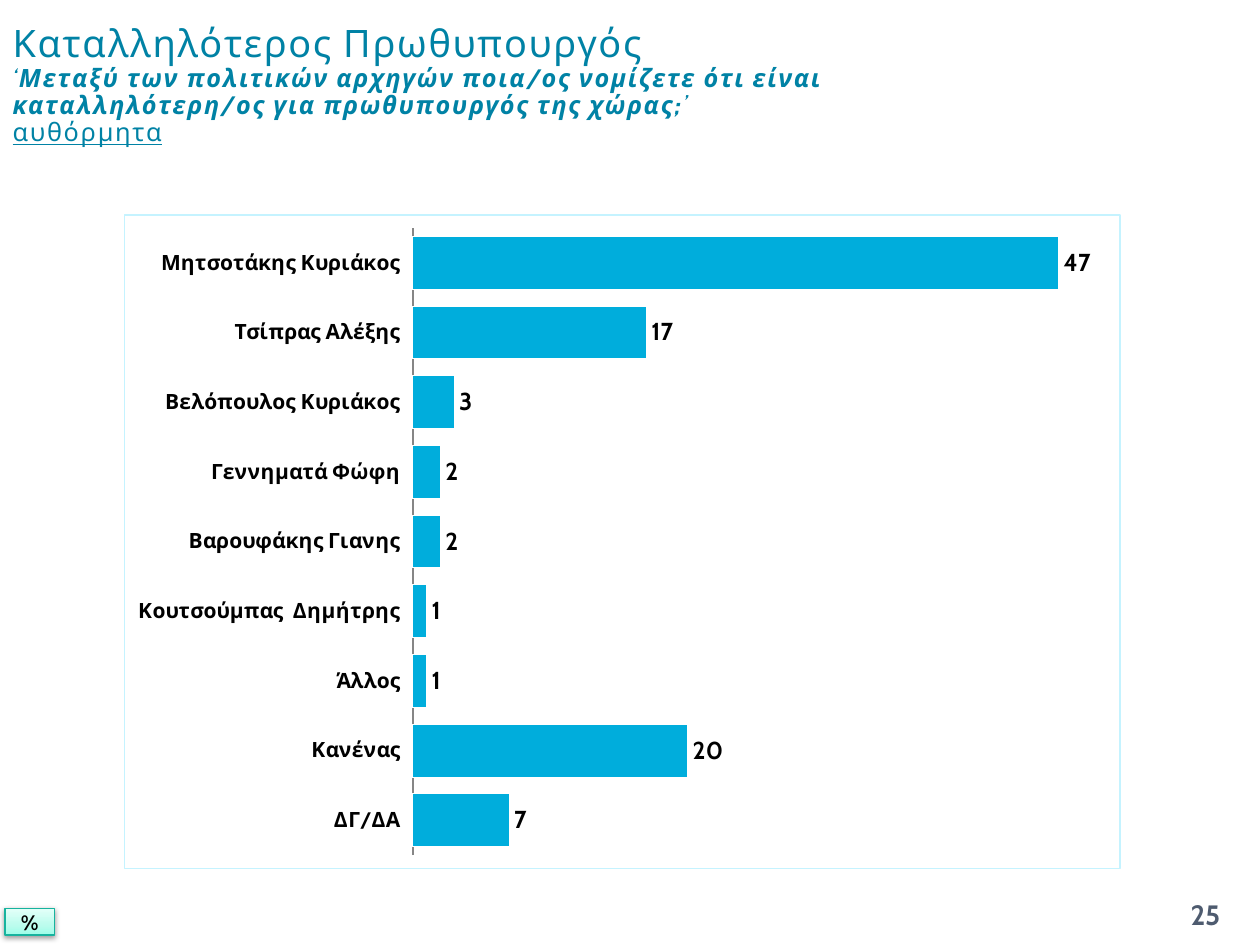
from lxml.etree import SubElement
from pptx import Presentation
from pptx.chart.data import CategoryChartData
from pptx.dml.color import RGBColor
from pptx.enum.chart import XL_CHART_TYPE as ChartType, XL_LABEL_POSITION as LabelPos
from pptx.enum.chart import XL_TICK_LABEL_POSITION as TickLabelPos, XL_TICK_MARK as TickMark
from pptx.enum.shapes import MSO_SHAPE as Shape
from pptx.enum.text import MSO_ANCHOR as Anchor, MSO_AUTO_SIZE as AutoSize, PP_ALIGN as Align
from pptx.oxml import parse_xml
from pptx.oxml.ns import nsdecls, qn
from pptx.util import Cm, Pt

FONT = "Cabin"
BLACK = RGBColor(0x00, 0x00, 0x00)
WHITE = RGBColor(0xFF, 0xFF, 0xFF)
TITLE_BLUE = RGBColor(0x00, 0x82, 0xA5)
BAR_BLUE = RGBColor(0x00, 0xAD, 0xDC)
FRAME_BLUE = RGBColor(0xC5, 0xF3, 0xFF)
AXIS_GREY = RGBColor(0x86, 0x86, 0x86)
SLATE = RGBColor(0x4E, 0x5B, 0x6F)
TEAL = RGBColor(0x16, 0xB3, 0x9E)
MINT_STOPS = [
    (0, RGBColor(0x9D, 0xFD, 0xE8)),
    (35, RGBColor(0xBB, 0xFC, 0xED)),
    (100, RGBColor(0xE4, 0xFF, 0xF9)),
]

ANSWERS = [
    ("Μητσοτάκης Κυριάκος", 47),
    ("Τσίπρας Αλέξης", 17),
    ("Βελόπουλος Κυριάκος", 3),
    ("Γεννηματά Φώφη", 2),
    ("Βαρουφάκης Γιανης", 2),
    ("Κουτσούμπας  Δημήτρης", 1),
    ("Άλλος", 1),
    ("Κανένας", 20),
    ("ΔΓ/ΔΑ", 7),
]


def style_font(font, size, color, bold=False, italic=False):
    font.name = FONT
    font.size = Pt(size)
    font.color.rgb = color
    font.bold = bold
    font.italic = italic


def add_run(paragraph, text, size, color, bold=False, italic=False):
    run = paragraph.add_run()
    run.text = text
    style_font(run.font, size, color, bold, italic)
    return run


def add_title_run(paragraph, text, size=14.4, bold=False, italic=False):
    run = add_run(paragraph, text, size, TITLE_BLUE, bold, italic)
    run.font._element.set("spc", "100")
    return run


def fill_title(title):
    title.left, title.top, title.width, title.height = Cm(0), Cm(0.33), Cm(17.5), Cm(2.8)
    frame = title.text_frame
    frame.word_wrap = True
    frame.auto_size = AutoSize.NONE
    frame.vertical_anchor = Anchor.MIDDLE
    heading = frame.paragraphs[0]
    heading.alignment = Align.LEFT
    heading.line_spacing = 0.9
    add_title_run(heading, "Καταλληλότερος Πρωθυπουργός", 21.6)
    heading.add_line_break()
    add_title_run(heading, "‘", italic=True)
    question = "Μεταξύ των πολιτικών αρχηγών ποια/ος νομίζετε ότι είναι καταλληλότερη/ος για πρωθυπουργός της χώρας;"
    add_title_run(heading, question, bold=True, italic=True)
    add_title_run(heading, "’ ", italic=True)
    heading.add_line_break()
    add_title_run(heading, "αυθόρμητα").font.underline = True


def place_plot(chart, x, y, w, h):
    plot_area = chart._chartSpace.chart.plotArea
    for old_layout in plot_area.findall(qn("c:layout")):
        plot_area.remove(old_layout)
    plot_area.insert(0, parse_xml(
        f'<c:layout {nsdecls("c")}><c:manualLayout><c:layoutTarget val="inner"/>'
        '<c:xMode val="edge"/><c:yMode val="edge"/>'
        f'<c:x val="{x}"/><c:y val="{y}"/><c:w val="{w}"/><c:h val="{h}"/>'
        '</c:manualLayout></c:layout>'))


def frame_chart(chart, color):
    chart._chartSpace.chart.addnext(parse_xml(
        f'<c:spPr {nsdecls("c", "a")}><a:noFill/><a:ln w="9525"><a:solidFill>'
        f'<a:srgbClr val="{color}"/></a:solidFill></a:ln></c:spPr>'))


def add_answer_chart(slide):
    answers = CategoryChartData(number_format="0")
    answers.categories = [name for name, share in ANSWERS]
    answers.add_series("Series 1", [share for name, share in ANSWERS])
    chart = slide.shapes.add_chart(
        ChartType.BAR_CLUSTERED, Cm(2.49), Cm(4.32), Cm(20.1), Cm(13.2), answers).chart
    chart.has_legend = False
    chart.has_title = False
    style_font(chart.font, 18, BLACK)

    names = chart.category_axis
    names.reverse_order = True
    names.major_tick_mark = names.minor_tick_mark = TickMark.NONE
    names.tick_label_position = TickLabelPos.LOW
    names.format.line.color.rgb = AXIS_GREY
    names.format.line.width = Pt(0.75)
    style_font(names.tick_labels.font, 12, BLACK, bold=True)

    shares = chart.value_axis
    shares.minimum_scale, shares.maximum_scale = 0, 50
    shares.has_major_gridlines = False
    shares.visible = False

    bars = chart.plots[0]
    bars.gap_width = 32
    bars.overlap = -25
    bars.vary_by_categories = False
    series = bars.series[0]
    series.invert_if_negative = False
    series.format.fill.solid()
    series.format.fill.fore_color.rgb = BAR_BLUE
    series.format.line.color.rgb = WHITE
    labels = series.data_labels
    labels.show_value = True
    labels.position = LabelPos.OUTSIDE_END
    labels.number_format = "#,##0"
    labels.number_format_is_linked = False
    style_font(labels.font, 14, BLACK, bold=True)

    place_plot(chart, 0.29, 0.02, 0.69, 0.96)
    frame_chart(chart, FRAME_BLUE)


def add_page_number(slide):
    frame = slide.shapes.add_textbox(Cm(23.3), Cm(17.93), Cm(2), Cm(1.02)).text_frame
    frame.word_wrap = True
    frame.vertical_anchor = Anchor.MIDDLE
    number = frame.paragraphs[0]
    number.alignment = Align.CENTER
    add_run(number, "25", 16, SLATE, bold=True)


def add_gradient(shape, stops):
    shape.fill.gradient()
    gradient = shape._element.spPr.find(qn("a:gradFill"))
    stop_list = gradient.find(qn("a:gsLst"))
    for old_stop in list(stop_list):
        stop_list.remove(old_stop)
    for percent, color in stops:
        stop = SubElement(stop_list, qn("a:gs"), pos=str(percent * 1000))
        SubElement(stop, qn("a:srgbClr"), val=str(color))
    gradient.find(qn("a:lin")).set("ang", "16200000")


def add_shadow(shape):
    shape.shadow.inherit = False
    effects = shape._element.spPr.find(qn("a:effectLst"))
    effects.append(parse_xml(
        f'<a:outerShdw {nsdecls("a")} blurRad="39370" dist="20320" dir="5400000" rotWithShape="0">'
        '<a:srgbClr val="000000"><a:alpha val="38000"/></a:srgbClr></a:outerShdw>'))


def add_percent_badge(slide):
    badge = slide.shapes.add_shape(Shape.RECTANGLE, Cm(0.1), Cm(18.31), Cm(1), Cm(0.54))
    add_gradient(badge, MINT_STOPS)
    badge.line.color.rgb = TEAL
    badge.line.width = Pt(0.75)
    add_shadow(badge)
    frame = badge.text_frame
    frame.vertical_anchor = Anchor.MIDDLE
    sign = frame.paragraphs[0]
    sign.alignment = Align.CENTER
    add_run(sign, "%", 12, BLACK, bold=True)


def main():
    prs = Presentation()
    prs.slide_width, prs.slide_height = Cm(25.4), Cm(19.05)
    slide = prs.slides.add_slide(prs.slide_layouts[5])
    fill_title(slide.shapes.title)
    add_answer_chart(slide)
    add_page_number(slide)
    add_percent_badge(slide)
    prs.save("out.pptx")


if __name__ == "__main__":
    main()
